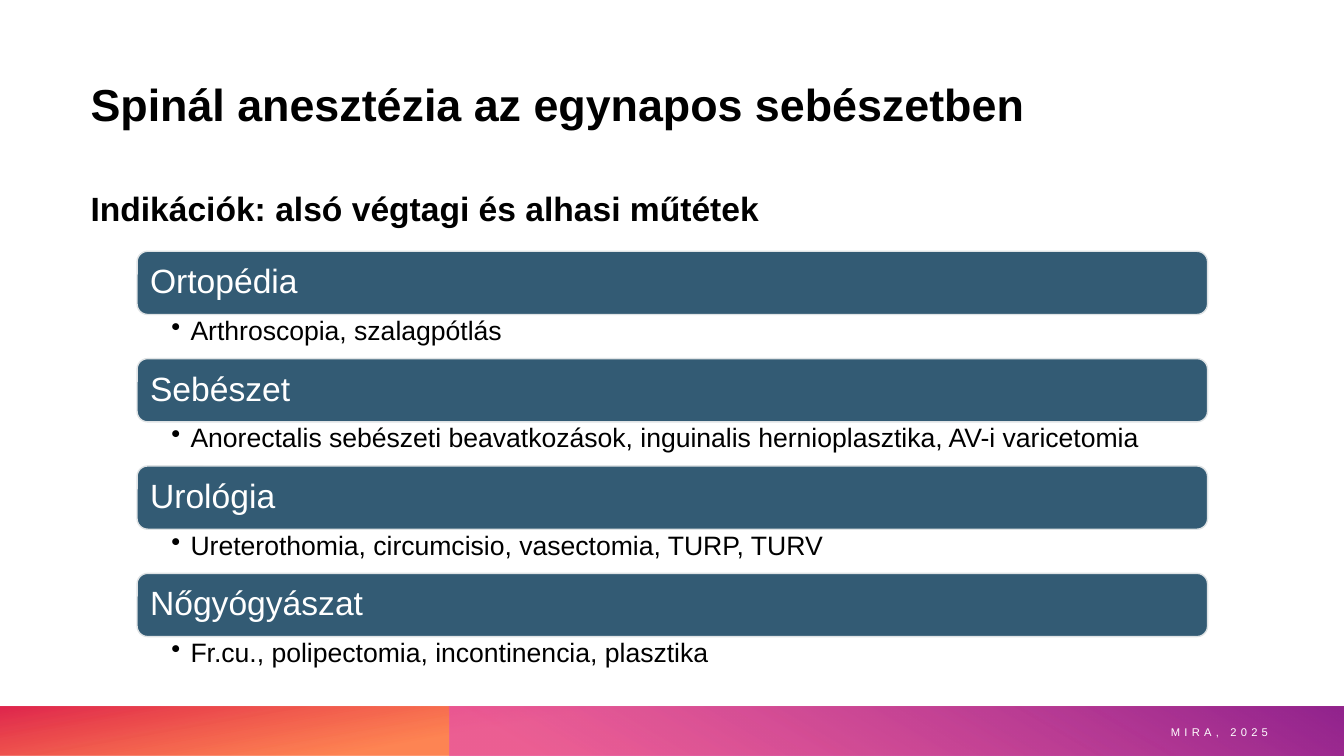
import pptx
import pptx.dml.color
import pptx.enum.shapes
import pptx.enum.text
import pptx.oxml
import pptx.oxml.ns
import pptx.util

ALIGN = pptx.enum.text.PP_ALIGN
ANCHOR = pptx.enum.text.MSO_ANCHOR
SHAPE = pptx.enum.shapes.MSO_SHAPE


def colour(hex_string):
    return pptx.dml.color.RGBColor.from_string(hex_string)


def add_child(parent, tag, **attributes):
    child = pptx.oxml.parse_xml(f"<{tag} {pptx.oxml.ns.nsdecls('a')}/>")
    for key, value in attributes.items():
        child.set(key, str(value))
    parent.append(child)


def write(frame, text, size=24, color="000000", bold=False, align=ALIGN.LEFT,
          anchor=ANCHOR.TOP, insets=(0.1, 0.05, 0.1, 0.05), line_spacing=None,
          tracking=0, bullet_indent=0):
    """Fill a text frame with one formatted paragraph; insets are in inches."""
    frame.word_wrap = True
    frame.vertical_anchor = anchor
    (frame.margin_left, frame.margin_top,
     frame.margin_right, frame.margin_bottom) = map(pptx.util.Inches, insets)
    paragraph = frame.paragraphs[0]
    paragraph.alignment = align
    if line_spacing:
        paragraph.line_spacing = line_spacing
    if bullet_indent:
        indent = pptx.util.Inches(bullet_indent)
        properties = paragraph._p.get_or_add_pPr()
        properties.set("marL", str(indent))
        properties.set("indent", str(-indent))
        add_child(properties, "a:buChar", char="•")
    run = paragraph.add_run()
    run.text = text
    run.font.name = "Arial"
    run.font.size = pptx.util.Pt(size)
    run.font.bold = bold
    run.font.color.rgb = colour(color)
    if tracking:
        run._r.get_or_add_rPr().set("spc", str(tracking * 100))


class SlideBuilder:
    """Places elements on a grid of 100 columns and 75 rows."""
    bar_fill, bar_line = "335B74", "DFE3E5"

    def __init__(self, presentation):
        self.column = presentation.slide_width / 100
        self.row = presentation.slide_height / 75
        self.slide = presentation.slides.add_slide(presentation.slide_layouts[6])

    def place(self, left, top, width, height):
        return (round(left * self.column), round(top * self.row),
                round(width * self.column), round(height * self.row))

    def text(self, box, text, **style):
        write(self.slide.shapes.add_textbox(*self.place(*box)).text_frame, text, **style)

    def shape(self, kind, box):
        shape = self.slide.shapes.add_shape(kind, *self.place(*box))
        shape.shadow.inherit = False
        return shape

    def bar(self, box, text):
        bar = self.shape(SHAPE.ROUNDED_RECTANGLE, box)
        bar.fill.solid()
        bar.fill.fore_color.rgb = colour(self.bar_fill)
        bar.line.color.rgb = colour(self.bar_line)
        bar.line.width = pptx.util.Pt(1)
        write(bar.text_frame, text, color="FFFFFF", anchor=ANCHOR.MIDDLE,
              insets=(0.1, 0.1, 0.1, 0.1), line_spacing=0.9)

    def gradient_band(self, box, angle, stops):
        band = self.shape(SHAPE.RECTANGLE, box)
        band.line.fill.background()
        band.fill.gradient()
        band.fill.gradient_angle = angle
        for stop, (position, hex_string, opacity) in zip(band.fill.gradient_stops, stops):
            stop.position = position
            stop.color.rgb = colour(hex_string)
            if opacity < 100:
                rgb = stop._gs.find(pptx.oxml.ns.qn("a:srgbClr"))
                add_child(rgb, "a:alpha", val=opacity * 1000)


SPECIALTIES = [
    ("Ortopédia", "Arthroscopia, szalagpótlás"),
    ("Sebészet", "Anorectalis sebészeti beavatkozások, inguinalis hernioplasztika, "
                 "AV-i varicetomia"),
    ("Urológia", "Ureterothomia, circumcisio, vasectomia, TURP, TURV"),
    ("Nőgyógyászat", "Fr.cu., polipectomia, incontinencia, plasztika"),
]


def main():
    presentation = pptx.Presentation()
    presentation.slide_width = pptx.util.Inches(13.33)
    presentation.slide_height = pptx.util.Inches(7.5)
    builder = SlideBuilder(presentation)

    # Footer bands
    builder.gradient_band((0, 70.1, 100, 4.9), 100,
                          [(0.62, "FE4A00", 67), (1, "DA002F", 85)])
    builder.gradient_band((33.45, 70.1, 66.55, 4.9), 60,
                          [(0.09, "E349BB", 62), (0.99, "92248E", 100)])

    # Title and subtitle
    builder.text((6, 7.7, 74.1, 6), "Spinál anesztézia az egynapos sebészetben",
                 size=32, bold=True, line_spacing=0.9)
    builder.text((6, 17.4, 57.15, 6), "Indikációk: alsó végtagi és alhasi műtétek",
                 bold=True, line_spacing=1.2)

    # Specialties with their procedures
    left, width, first_top, pitch, bar_height = 10.2, 79.65, 24.93, 10.65, 6.27
    for index, (specialty, procedures) in enumerate(SPECIALTIES):
        top = first_top + index * pitch
        builder.bar((left, top, width, bar_height), specialty)
        builder.text((left, top + bar_height, width, pitch - bar_height), procedures,
                     size=19, insets=(0.34, 0.03, 0.19, 0.03), line_spacing=0.9,
                     bullet_indent=0.19)

    # Footer text
    builder.text((56.8, 70.6, 38.3, 4), "MIRA, 2025", size=8, color="FFFFFF",
                 align=ALIGN.RIGHT, anchor=ANCHOR.MIDDLE, tracking=3)

    presentation.save("out.pptx")


if __name__ == "__main__":
    main()
